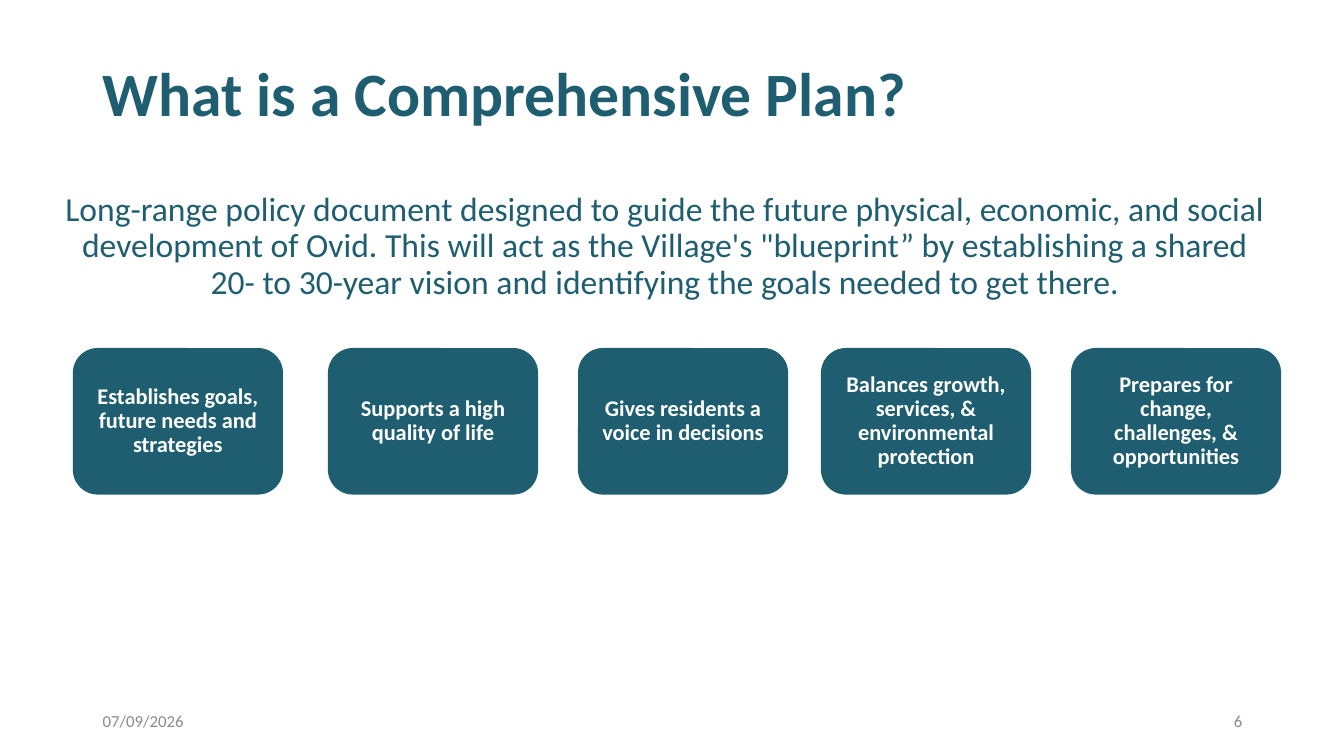
"""Build the slide that explains what a comprehensive plan is."""
from pptx import Presentation
from pptx.dml.color import RGBColor
from pptx.enum.shapes import MSO_SHAPE
from pptx.enum.text import MSO_ANCHOR, MSO_AUTO_SIZE, PP_ALIGN
from pptx.oxml.ns import qn
from pptx.util import Inches, Pt
from lxml import etree

TEAL = RGBColor(0x1E, 0x5E, 0x70)
GRAY = RGBColor(0x8C, 0x8C, 0x8C)
WHITE = RGBColor(0xFF, 0xFF, 0xFF)
FONT = "Calibri"
LEFT, CENTER, RIGHT = PP_ALIGN.LEFT, PP_ALIGN.CENTER, PP_ALIGN.RIGHT
TOP, MIDDLE, BOTTOM = MSO_ANCHOR.TOP, MSO_ANCHOR.MIDDLE, MSO_ANCHOR.BOTTOM
NO_AUTOFIT = MSO_AUTO_SIZE.NONE
ROUNDED = MSO_SHAPE.ROUNDED_RECTANGLE

SUMMARY = (
    "Long-range policy document designed to guide the future physical, economic, "
    "and social development of Ovid. This will act as the Village's \"blueprint” "
    "by establishing a shared 20- to 30-year vision and identifying the goals "
    "needed to get there."
)
BENEFITS = [
    (0.73, "Establishes goals, future needs and strategies"),
    (3.26, "Supports a high quality of life"),
    (5.74, "Gives residents a voice in decisions"),
    (8.15, "Balances growth, services, & environmental protection"),
    (10.63, "Prepares for change, challenges, & opportunities"),
]


def place(shape, left, top, width, height):
    """Move and size a shape, in inches."""
    shape.left, shape.top = Inches(left), Inches(top)
    shape.width, shape.height = Inches(width), Inches(height)


def write(shape, text, size, color, align=LEFT, anchor=MIDDLE, bold=False, spacing=0.9):
    """Write one formatted paragraph into a shape."""
    frame = shape.text_frame
    frame.word_wrap = True
    frame.auto_size = NO_AUTOFIT
    frame.vertical_anchor = anchor
    paragraph = frame.paragraphs[0]
    paragraph.alignment = align
    paragraph.line_spacing = spacing
    paragraph.space_before = Pt(0)
    run = paragraph.add_run()
    run.text = text
    run.font.name = FONT
    run.font.size = Pt(size)
    run.font.bold = bold
    run.font.color.rgb = color


def remove_bullet(paragraph):
    """Turn off the bullet and indent of a paragraph."""
    properties = paragraph._p.get_or_add_pPr()
    properties.set("marL", "0")
    properties.set("indent", "0")
    etree.SubElement(properties, qn("a:buNone"))


def add_title(slide):
    """Fill the title placeholder."""
    title = slide.shapes.title
    place(title, 0.92, 0.2, 11.5, 1.14)
    write(title, "What is a Comprehensive Plan?", 44, TEAL, anchor=BOTTOM, bold=True)


def add_summary(slide):
    """Fill the body placeholder with the plan's definition."""
    body = slide.placeholders[1]
    place(body, 0.49, 1.86, 12.21, 1.23)
    remove_bullet(body.text_frame.paragraphs[0])
    write(body, SUMMARY, 24, TEAL, align=CENTER, anchor=TOP)


def add_benefit(slide, left, text):
    """Add one rounded benefit box."""
    box = slide.shapes.add_shape(
        ROUNDED, Inches(left), Inches(3.46), Inches(2.07), Inches(1.44)
    )
    box.shadow.inherit = False
    box.fill.solid()
    box.fill.fore_color.rgb = TEAL
    box.line.color.rgb = TEAL
    box.line.width = Pt(1)
    write(box, text, 16, WHITE, align=CENTER, bold=True)


def add_footer(slide, left, text, align):
    """Add one small footer text."""
    footer = slide.shapes.add_textbox(Inches(left), Inches(6.95), Inches(3), Inches(0.4))
    write(footer, text, 12, GRAY, align=align, spacing=1.0)


def main():
    """Build and save the presentation."""
    presentation = Presentation()
    presentation.slide_width = Inches(13.33)
    presentation.slide_height = Inches(7.5)
    slide = presentation.slides.add_slide(presentation.slide_layouts[1])
    add_title(slide)
    add_summary(slide)
    for left, text in BENEFITS:
        add_benefit(slide, left, text)
    add_footer(slide, 0.92, "07/09/2026", LEFT)
    add_footer(slide, 9.42, "6", RIGHT)
    presentation.save("out.pptx")


if __name__ == "__main__":
    main()
